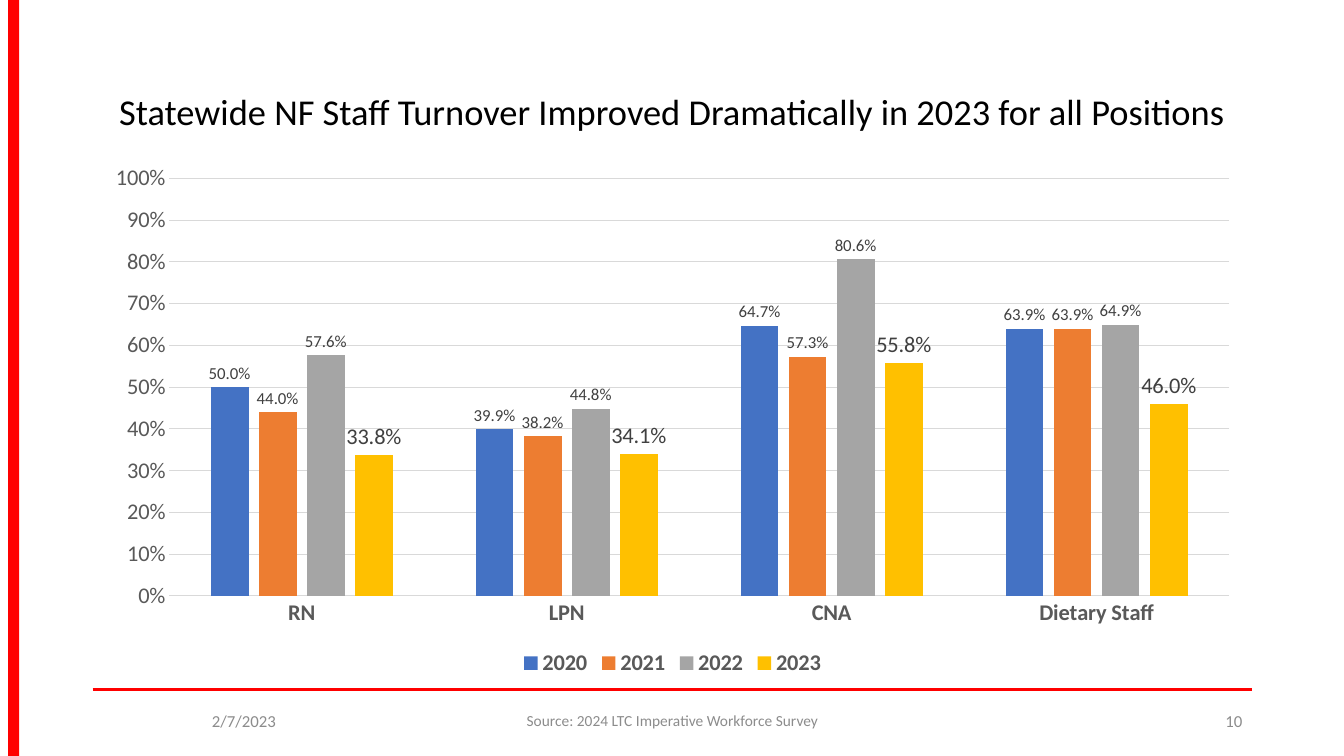
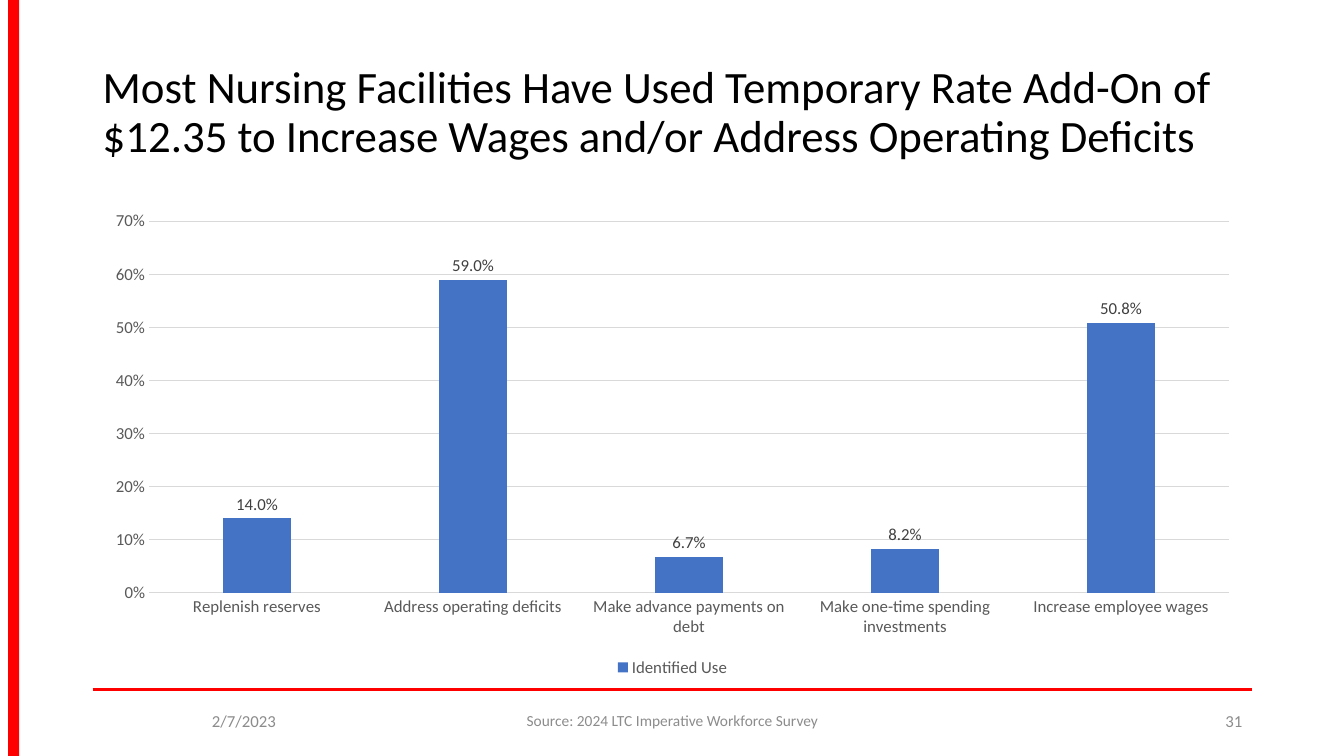
"""Build two workforce survey chart slides."""
import pptx
import pptx.chart.data
import pptx.dml.color
import pptx.enum.chart
import pptx.enum.shapes
import pptx.enum.text
import pptx.oxml
import pptx.util

Inches, Pt = pptx.util.Inches, pptx.util.Pt
RGBColor = pptx.dml.color.RGBColor
ALIGN = pptx.enum.text.PP_ALIGN

FONT = "Calibri"
RED = RGBColor(0xFF, 0x00, 0x00)
BLACK = RGBColor(0x00, 0x00, 0x00)
FOOTER_GRAY = RGBColor(0x8C, 0x8C, 0x8C)
AXIS_GRAY = RGBColor(0x59, 0x59, 0x59)
LABEL_GRAY = RGBColor(0x40, 0x40, 0x40)
GRID_GRAY = RGBColor(0xD9, 0xD9, 0xD9)
SERIES_COLORS = [
    RGBColor(0x44, 0x72, 0xC4),
    RGBColor(0xED, 0x7D, 0x31),
    RGBColor(0xA5, 0xA5, 0xA5),
    RGBColor(0xFF, 0xC0, 0x00),
]

LEFT, WIDTH = 0.92, 11.5
CHART_BOTTOM = 6.76
FOOTER_TOP, FOOTER_HEIGHT = 6.95, 0.4
DATE = "2/7/2023"
SOURCE = "Source: 2024 LTC Imperative Workforce Survey"

SLIDES = [
    {
        "title": "Statewide NF Staff Turnover Improved Dramatically in 2023 for all Positions",
        "title_size": 26,
        "title_align": ALIGN.CENTER,
        "number": "10",
        "chart_top": 1.53,
        "axis_size": 16,
        "bold": True,
        "maximum": 1,
        "categories": ["RN", "LPN", "CNA", "Dietary Staff"],
        "series": [
            ("2020", [0.5, 0.399, 0.647, 0.639], 12),
            ("2021", [0.44, 0.382, 0.573, 0.639], 12),
            ("2022", [0.576, 0.448, 0.806, 0.649], 12),
            ("2023", [0.338, 0.341, 0.558, 0.46], 16),
        ],
    },
    {
        "title": "Most Nursing Facilities Have Used Temporary Rate Add-On of "
                 "$12.35 to Increase Wages and/or Address Operating Deficits",
        "title_size": 32,
        "title_align": ALIGN.LEFT,
        "number": "31",
        "chart_top": 2,
        "axis_size": 12,
        "bold": False,
        "maximum": 0.7,
        "categories": [
            "Replenish reserves",
            "Address operating deficits",
            "Make advance payments on debt",
            "Make one-time spending investments",
            "Increase employee wages",
        ],
        "series": [("Identified Use", [0.14, 0.59, 0.067, 0.082, 0.508], 12)],
    },
]


def set_font(font, size, color, bold=False):
    font.name = FONT
    font.size = Pt(size)
    font.color.rgb = color
    font.bold = bold


def add_text(s, text, box, size, color, align):
    tf = s.shapes.add_textbox(*map(Inches, box)).text_frame
    tf.word_wrap = True
    tf.vertical_anchor = pptx.enum.text.MSO_ANCHOR.MIDDLE
    p = tf.paragraphs[0]
    p.text = text
    p.alignment = align
    set_font(p.font, size, color)
    return p


def add_frame(s, number):
    rule = s.shapes.add_connector(
        pptx.enum.shapes.MSO_CONNECTOR.STRAIGHT,
        Inches(LEFT), Inches(6.84), Inches(LEFT + WIDTH), Inches(6.84))
    rule.line.color.rgb = RED
    rule.line.width = Pt(2)
    sp_pr = rule._element.spPr
    sp_pr.append(sp_pr.makeelement(pptx.oxml.ns.qn("a:effectLst"), {}))

    band = s.shapes.add_shape(
        pptx.enum.shapes.MSO_SHAPE.RECTANGLE,
        Inches(0.08), 0, Inches(0.11), Inches(7.5))
    band.shadow.inherit = False
    band.fill.solid()
    band.fill.fore_color.rgb = RED
    band.line.fill.background()

    footers = [
        (DATE, LEFT, 3, 12, ALIGN.CENTER),
        (SOURCE, 4.42, 4.5, 11, ALIGN.CENTER),
        (number, 9.42, 3, 12, ALIGN.RIGHT),
    ]
    for text, left, width, size, align in footers:
        box = (left, FOOTER_TOP, width, FOOTER_HEIGHT)
        add_text(s, text, box, size, FOOTER_GRAY, align)


def style_axes(chart, size, bold, maximum):
    for axis in (chart.category_axis, chart.value_axis):
        axis.major_tick_mark = pptx.enum.chart.XL_TICK_MARK.NONE
        axis.minor_tick_mark = pptx.enum.chart.XL_TICK_MARK.NONE
    category, value = chart.category_axis, chart.value_axis
    set_font(category.tick_labels.font, size, AXIS_GRAY, bold)
    set_font(value.tick_labels.font, size, AXIS_GRAY)
    for line in (category.format.line, value.major_gridlines.format.line):
        line.color.rgb = GRID_GRAY
        line.width = Pt(0.75)
    value.format.line.fill.background()
    value.minimum_scale = 0
    value.maximum_scale = maximum
    value.major_unit = 0.1
    value.tick_labels.number_format = "0%"
    value.tick_labels.number_format_is_linked = False


def add_column_chart(s, slide):
    data = pptx.chart.data.CategoryChartData(number_format="0.0%")
    data.categories = slide["categories"]
    for name, values, _ in slide["series"]:
        data.add_series(name, values)
    top = slide["chart_top"]
    chart = s.shapes.add_chart(
        pptx.enum.chart.XL_CHART_TYPE.COLUMN_CLUSTERED,
        Inches(LEFT), Inches(top), Inches(WIDTH), Inches(CHART_BOTTOM - top),
        data).chart
    set_font(chart.font, 10, BLACK)
    chart.has_title = False
    style_axes(chart, slide["axis_size"], slide["bold"], slide["maximum"])

    chart.has_legend = True
    chart.legend.position = pptx.enum.chart.XL_LEGEND_POSITION.BOTTOM
    chart.legend.include_in_layout = False
    set_font(chart.legend.font, slide["axis_size"], AXIS_GRAY, slide["bold"])

    plot = chart.plots[0]
    plot.gap_width = 219
    plot.overlap = -27
    plot.vary_by_categories = False
    for series, color, (_, _, size) in zip(plot.series, SERIES_COLORS, slide["series"]):
        series.format.fill.solid()
        series.format.fill.fore_color.rgb = color
        series.invert_if_negative = False
        labels = series.data_labels
        labels.show_value = True
        labels.number_format = "0.0%"
        labels.number_format_is_linked = False
        labels.position = pptx.enum.chart.XL_LABEL_POSITION.OUTSIDE_END
        set_font(labels.font, size, LABEL_GRAY)


def main():
    prs = pptx.Presentation()
    prs.slide_width = Inches(13.33)
    prs.slide_height = Inches(7.5)
    for slide in SLIDES:
        s = prs.slides.add_slide(prs.slide_layouts[6])
        add_frame(s, slide["number"])
        p = add_text(s, slide["title"], (LEFT, 0.4, WIDTH, 1.45),
                     slide["title_size"], BLACK, slide["title_align"])
        p.line_spacing = 0.9
        add_column_chart(s, slide)
    prs.save("out.pptx")


if __name__ == "__main__":
    main()
